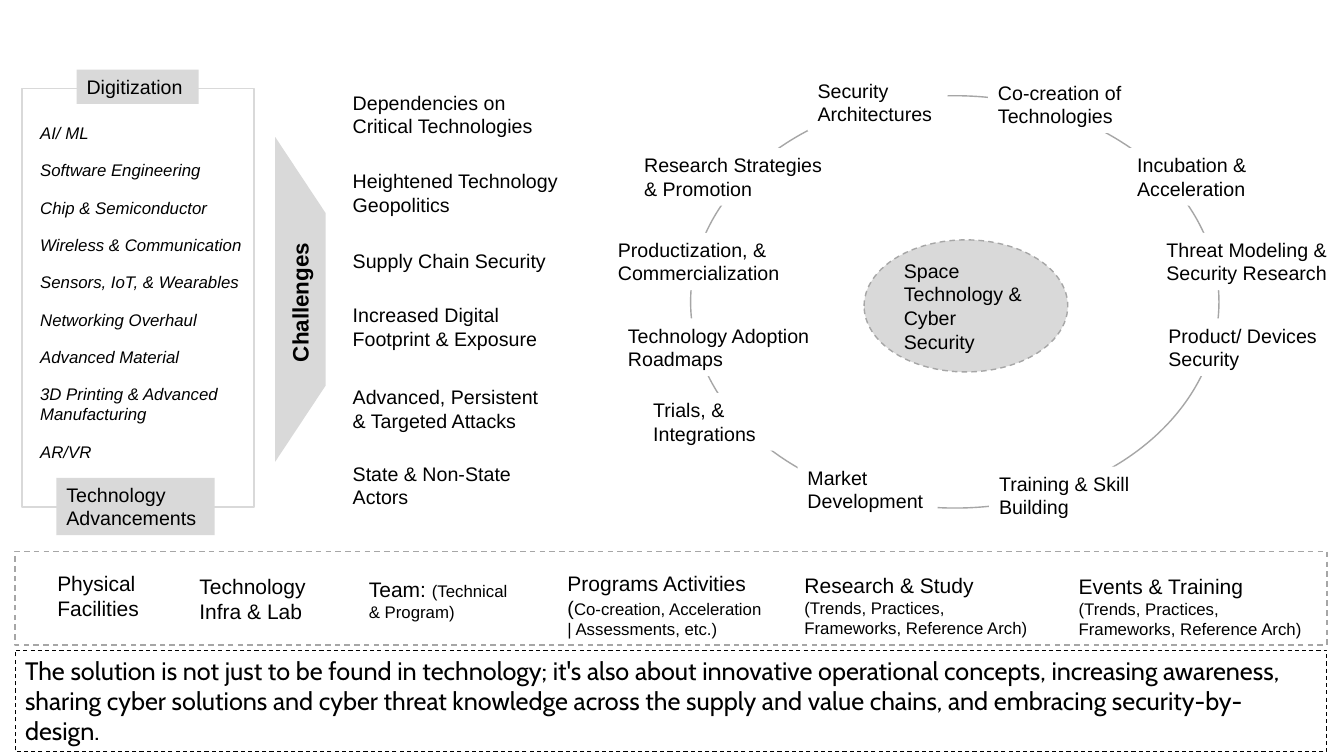
from pptx import Presentation
from pptx.dml.color import RGBColor
from pptx.enum.dml import MSO_LINE
from pptx.enum.shapes import MSO_SHAPE as Shape
from pptx.enum.text import MSO_ANCHOR as Anchor, PP_ALIGN as Align
from pptx.util import Inches, Pt

BLACK = RGBColor(0x00, 0x00, 0x00)
WHITE = RGBColor(0xFF, 0xFF, 0xFF)
LIGHT_GRAY = RGBColor(0xD9, 0xD9, 0xD9)
MID_GRAY = RGBColor(0xA6, 0xA6, 0xA6)

presentation = Presentation()
presentation.slide_width = Inches(13.33)
presentation.slide_height = Inches(7.5)
slide = presentation.slides.add_slide(presentation.slide_layouts[6])


def add_figure(kind, box, fill=None, line=None, line_width=1, dashed=False):
    shape = slide.shapes.add_shape(kind, *map(Inches, box))
    shape.shadow.inherit = False
    if fill is None:
        shape.fill.background()
    else:
        shape.fill.solid()
        shape.fill.fore_color.rgb = fill
    if line is None:
        shape.line.fill.background()
    else:
        shape.line.color.rgb = line
        shape.line.width = Pt(line_width)
        if dashed:
            shape.line.dash_style = MSO_LINE.DASH
    return shape


def write(shape, paragraphs, size=14, font="Arial", anchor=Anchor.TOP):
    """Fill a shape with paragraphs, each a string or a list of (text, size) runs."""
    frame = shape.text_frame
    frame.word_wrap = True
    frame.vertical_anchor = anchor
    for index, content in enumerate(paragraphs):
        paragraph = frame.add_paragraph() if index else frame.paragraphs[0]
        paragraph.alignment = Align.LEFT
        paragraph.font.name = font
        paragraph.font.size = Pt(size)
        paragraph.font.color.rgb = BLACK
        runs = [(content, size)] if isinstance(content, str) else content
        for text, run_size in runs:
            run = paragraph.add_run()
            run.text = text
            if run_size != size:
                run.font.size = Pt(run_size)
    return frame.paragraphs[0]


# Technology panel with its two labels
add_figure(Shape.RECTANGLE, (0.22, 0.88, 2.3, 4.15), line=LIGHT_GRAY)
panel_labels = [
    ("Technology Advancements", (0.56, 4.74, 1.57, 0.57)),
    ("Digitization", (0.76, 0.69, 1.21, 0.34)),
]
for text, box in panel_labels:
    write(add_figure(Shape.RECTANGLE, box, fill=LIGHT_GRAY), [text])

# Technologies: equal steps, with extra room after a two-line entry
technologies = [
    ("AI/ ML", 1), ("Software Engineering", 1), ("Chip & Semiconductor", 1),
    ("Wireless & Communication", 1), ("Sensors, IoT, & Wearables", 1),
    ("Networking Overhaul", 1), ("Advanced Material", 1),
    ("3D Printing & Advanced Manufacturing", 2), ("AR/VR", 1),
]
top = 1.17
for text, lines in technologies:
    height = 0.1 + 0.2 * lines
    item = slide.shapes.add_textbox(Inches(0.3), Inches(top), Inches(2.28), Inches(height))
    write(item, [text], size=12).font.italic = True
    top += height + 0.07

# Challenges wedge
wedge = add_figure(Shape.TRAPEZOID, (1.37, 2.72, 3.22, 0.5), fill=LIGHT_GRAY)
wedge.adjustments[0] = 1.51
wedge.rotation = 90
wedge_label = slide.shapes.add_textbox(Inches(2.24), Inches(2.77), Inches(1.47), Inches(0.37))
wedge_label.rotation = 270
write(wedge_label, ["Challenges"], size=16).font.bold = True

# Challenges list
challenges = [
    ("Dependencies on Critical Technologies", 0.85, 2.13),
    ("Heightened Technology Geopolitics", 1.63, 2.3),
    ("Supply Chain Security", 2.42, 2.3),
    ("Increased Digital Footprint & Exposure", 2.96, 2.13),
    ("Advanced, Persistent & Targeted Attacks", 3.77, 2.13),
    ("State & Non-State Actors", 4.53, 2.13),
]
for text, top, width in challenges:
    item = slide.shapes.add_textbox(Inches(3.4), Inches(top), Inches(width), Inches(0.57))
    write(item, [text])

# Ring of activities: white labels interrupt the ellipse
add_figure(Shape.OVAL, (6.85, 0.95, 5.24, 4.09), line=MID_GRAY)
activities = [
    ("Security Architectures", 8.01, 0.73, 1.39),
    ("Co-creation of Technologies", 9.8, 0.75, 1.5),
    ("Incubation & Acceleration", 11.18, 1.47, 1.39),
    ("Threat Modeling & Security Research", 11.47, 2.31, 1.8),
    ("Product/ Devices Security", 11.49, 3.16, 1.74),
    ("Training & Skill Building", 9.81, 4.63, 1.62),
    ("Market Development", 7.91, 4.57, 1.39),
    ("Trials, & Integrations", 6.38, 3.9, 1.62),
    ("Technology Adoption Roadmaps", 6.13, 3.16, 2.03),
    ("Productization, & Commercialization", 6.03, 2.31, 2.3),
    ("Research Strategies & Promotion", 6.29, 1.47, 2.04),
]
for text, left, top, width in activities:
    write(add_figure(Shape.RECTANGLE, (left, top, width, 0.57), fill=WHITE), [text])

# Centre of the ring
core = add_figure(Shape.OVAL, (8.57, 2.38, 2.02, 1.31), LIGHT_GRAY, MID_GRAY, dashed=True)
write(core, ["Space Technology & Cyber Security"], anchor=Anchor.MIDDLE)

# Resources strip
add_figure(Shape.RECTANGLE, (0.15, 5.47, 13.01, 0.93), line=MID_GRAY, dashed=True)
trends = [("(Trends, Practices, Frameworks, Reference Arch)", 12)]
resources = [
    (["Physical Facilities"], (0.47, 5.61, 1.07, 0.61)),
    (["Technology Infra & Lab"], (1.88, 5.64, 1.4, 0.61)),
    ([[("Team: ", 15), ("(Technical & Program)", 12)]], (3.56, 5.67, 1.69, 0.56)),
    (["Programs Activities",
      [("(", 14), ("Co-creation, Acceleration | Assessments, etc.)", 12)]],
     (5.53, 5.61, 2.15, 0.79)),
    (["Research & Study", trends], (7.88, 5.63, 2.52, 0.76)),
    (["Events & Training", trends], (10.6, 5.64, 2.47, 0.76)),
]
for paragraphs, box in resources:
    write(slide.shapes.add_textbox(*map(Inches, box)), paragraphs, size=15)

# Closing statement
statement = add_figure(Shape.RECTANGLE, (0.15, 6.45, 13.01, 1.01),
                       line=BLACK, line_width=0.75, dashed=True)
write(statement, [
    "The solution is not just to be found in technology; it's also about innovative "
    "operational concepts, increasing awareness, sharing cyber solutions and cyber "
    "threat knowledge across the supply and value chains, and embracing "
    "security-by-design."
], size=18, font="Cabin")

presentation.save("out.pptx")
